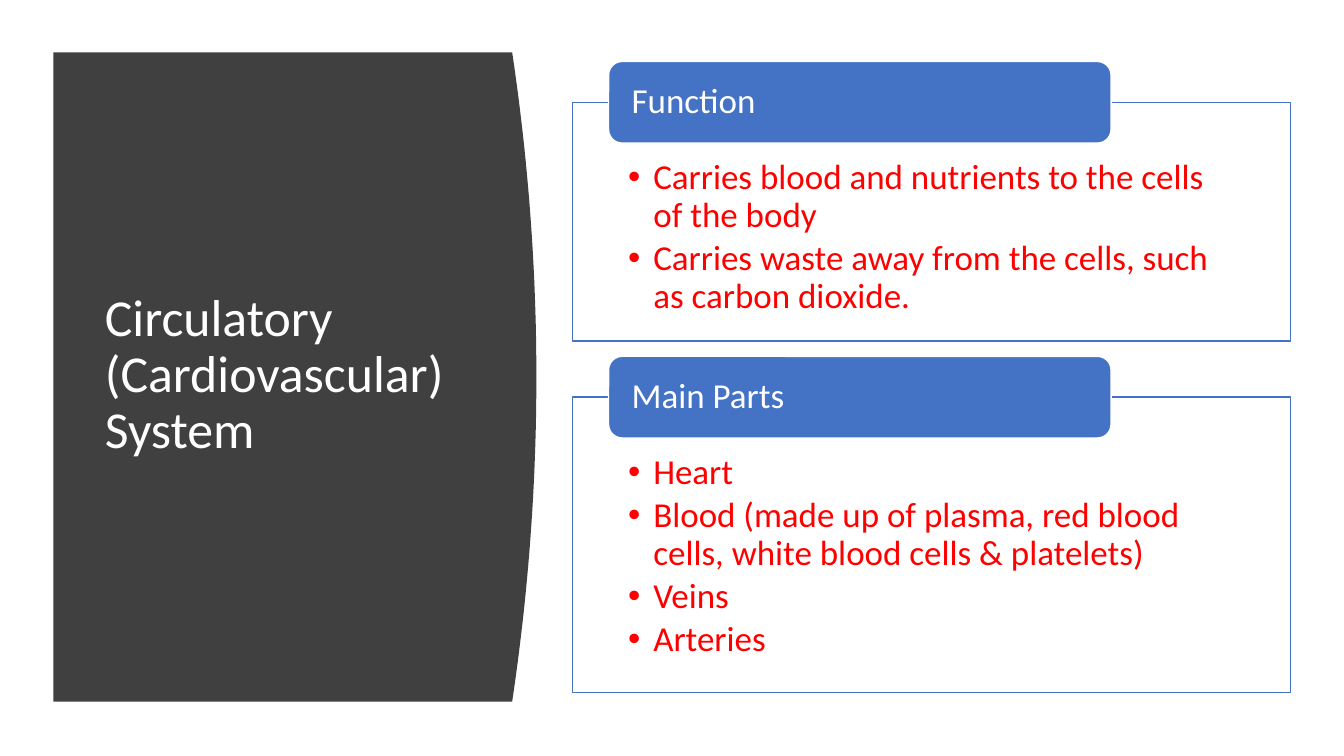
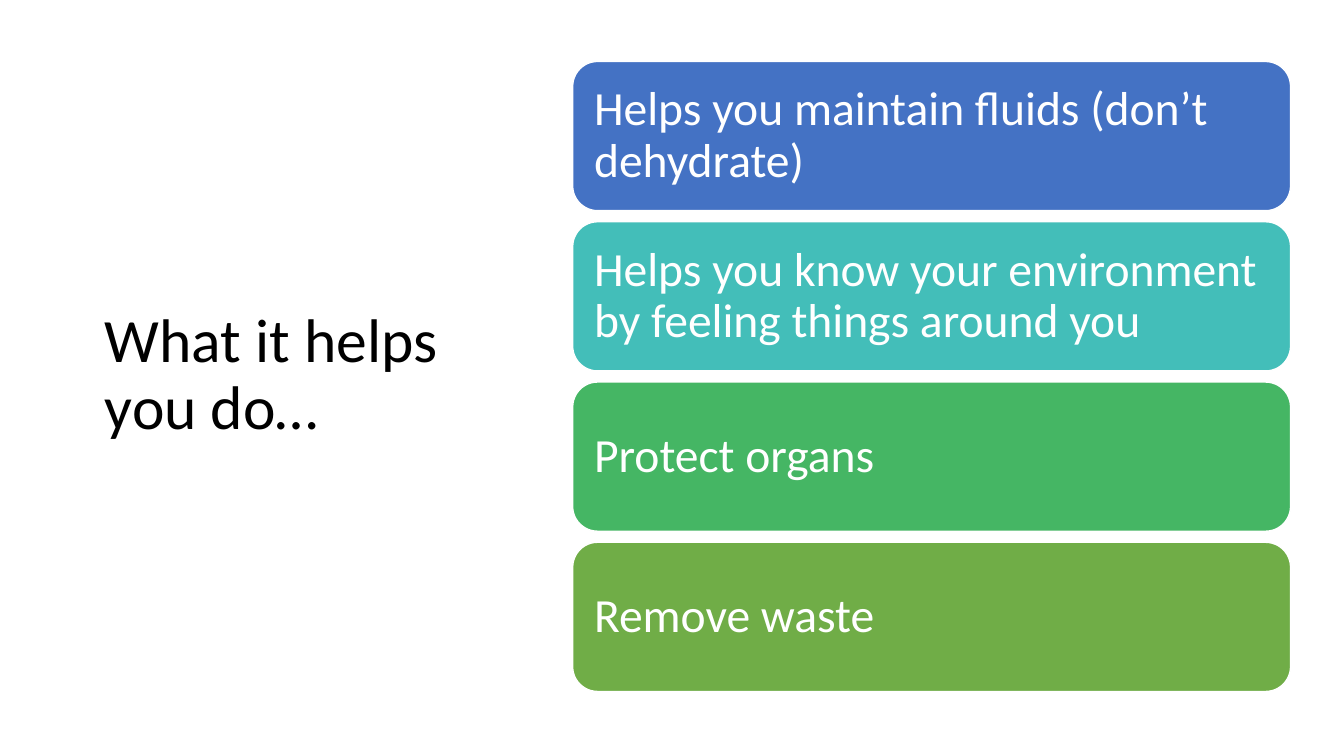
from lxml.etree import SubElement
from pptx import Presentation
from pptx.dml.color import RGBColor
from pptx.enum.shapes import MSO_SHAPE
from pptx.enum.text import MSO_ANCHOR, MSO_AUTO_SIZE, PP_ALIGN
from pptx.oxml.ns import qn
from pptx.util import Inches, Pt

COLORS = {
    "panel": "404040", "white": "FFFFFF", "black": "000000", "red": "FF0000",
    "blue": "4472C4", "teal": "43BEB9", "green": "45B664", "olive": "70AD47",
}
FONT = "Calibri"
SLIDE_WIDTH, SLIDE_HEIGHT = 13.33, 7.5
TITLE_BOX = (0.94, 1.11, 3.74, 5.24)
PANEL = {"left": 0.53, "top": 0.52, "side": 5.08, "bottom": 6.96, "bulge": 0.24}
PANEL_STEPS = 48
CONTENT_LEFT, CONTENT_TOP, CONTENT_WIDTH, CONTENT_HEIGHT = 5.68, 0.61, 7.12, 6.25
HEADER_HEIGHT, SECTION_GAP, CARD_GAP = 0.81, 0.15, 0.11

SYSTEM_TITLE = "Circulatory (Cardiovascular) System"
SECTIONS = [
    ("Function", 2.37, [
        "Carries blood and nutrients to the cells of the body",
        "Carries waste away from the cells, such as carbon dioxide.",
    ]),
    ("Main Parts", 2.93, [
        "Heart",
        "Blood (made up of plasma, red blood cells, white blood cells & platelets)",
        "Veins",
        "Arteries",
    ]),
]
HELP_TITLE = "What it helps you do…"
HELP_CARDS = [
    ("Helps you maintain fluids (don’t dehydrate)", "blue"),
    ("Helps you know your environment by feeling things around you", "teal"),
    ("Protect organs", "green"),
    ("Remove waste", "olive"),
]


def color(name):
    """Return the named colour."""
    return RGBColor.from_string(COLORS[name])


def write_text(shape, lines, size, ink="white", anchor=MSO_ANCHOR.MIDDLE,
               insets=(0.1, 0.05, 0.1, 0.05), space_after=0, bullet=False):
    """Fill a shape with left-aligned paragraphs."""
    frame = shape.text_frame
    frame.word_wrap = True
    frame.auto_size = MSO_AUTO_SIZE.NONE
    frame.vertical_anchor = anchor
    (frame.margin_left, frame.margin_top,
     frame.margin_right, frame.margin_bottom) = map(Inches, insets)
    frame.text = "\n".join(lines)
    for paragraph in frame.paragraphs:
        paragraph.alignment = PP_ALIGN.LEFT
        paragraph.line_spacing = 0.9
        paragraph.space_before = Pt(0)
        paragraph.space_after = Pt(space_after)
        font = paragraph.runs[0].font
        font.name, font.size = FONT, Pt(size)
        font.color.rgb = color(ink)
        if bullet:
            properties = paragraph._p.get_or_add_pPr()
            properties.set("marL", str(Inches(0.25)))
            properties.set("indent", str(-Inches(0.25)))
            SubElement(properties, qn("a:buFont"), typeface="Arial")
            SubElement(properties, qn("a:buChar"), char="•")


def add_box(slide, kind, box, fill, line):
    """Add a filled and outlined preset shape."""
    shape = slide.shapes.add_shape(kind, *map(Inches, box))
    shape.shadow.inherit = False
    shape.fill.solid()
    shape.fill.fore_color.rgb = color(fill)
    shape.line.color.rgb = color(line)
    shape.line.width = Pt(1)
    return shape


def add_titled_slide(presentation, title, size, ink):
    """Add a title-only slide with its title in the left column."""
    slide = presentation.slides.add_slide(presentation.slide_layouts[5])
    placeholder = slide.shapes.title
    (placeholder.left, placeholder.top,
     placeholder.width, placeholder.height) = map(Inches, TITLE_BOX)
    write_text(placeholder, [title], size, ink=ink)
    return slide


def add_curved_panel(slide):
    """Put the dark panel with a bulging right side behind the title."""
    top, bottom = PANEL["top"], PANEL["bottom"]
    edge = []
    for step in range(PANEL_STEPS + 1):
        share = step / PANEL_STEPS
        x = PANEL["side"] + PANEL["bulge"] * 4 * share * (1 - share)
        edge.append((Inches(x), Inches(top + (bottom - top) * share)))
    left = Inches(PANEL["left"])
    builder = slide.shapes.build_freeform(left, Inches(top))
    builder.add_line_segments(edge + [(left, Inches(bottom))], close=True)
    panel = builder.convert_to_shape()
    panel.shadow.inherit = False
    panel.fill.solid()
    panel.fill.fore_color.rgb = color("panel")
    panel.line.fill.background()
    slide.shapes.title.element.addprevious(panel.element)


def build_system_slide(presentation):
    """Build the slide of framed bullet lists with header tabs."""
    slide = add_titled_slide(presentation, SYSTEM_TITLE, 37, "white")
    add_curved_panel(slide)
    top = CONTENT_TOP
    for heading, height, bullets in SECTIONS:
        frame_top = top + HEADER_HEIGHT / 2
        frame = add_box(slide, MSO_SHAPE.RECTANGLE,
                        (CONTENT_LEFT, frame_top, CONTENT_WIDTH, height), "white", "blue")
        white = frame.element.spPr.find(qn("a:solidFill"))[0]
        SubElement(white, qn("a:alpha"), val="90000")
        write_text(frame, bullets, 25, ink="red", anchor=MSO_ANCHOR.TOP,
                   insets=(0.55, 0.57, 0.55, 0.19), space_after=3.75, bullet=True)
        header_box = (CONTENT_LEFT + 0.05 * CONTENT_WIDTH, top,
                      0.7 * CONTENT_WIDTH, HEADER_HEIGHT)
        header = add_box(slide, MSO_SHAPE.ROUNDED_RECTANGLE, header_box, "blue", "white")
        write_text(header, [heading], 25, insets=(0.19, 0, 0.19, 0))
        top = frame_top + height + SECTION_GAP


def build_help_slide(presentation):
    """Build the slide of equal coloured cards."""
    slide = add_titled_slide(presentation, HELP_TITLE, 44, "black")
    pitch = (CONTENT_HEIGHT + CARD_GAP) / len(HELP_CARDS)
    for row, (text, fill) in enumerate(HELP_CARDS):
        box = (CONTENT_LEFT, CONTENT_TOP + row * pitch, CONTENT_WIDTH, pitch - CARD_GAP)
        card = add_box(slide, MSO_SHAPE.ROUNDED_RECTANGLE, box, fill, "white")
        write_text(card, [text], 34, insets=(0.14,) * 4)


def main():
    """Build and save the presentation."""
    presentation = Presentation()
    presentation.slide_width = Inches(SLIDE_WIDTH)
    presentation.slide_height = Inches(SLIDE_HEIGHT)
    build_system_slide(presentation)
    build_help_slide(presentation)
    presentation.save("out.pptx")


if __name__ == "__main__":
    main()
